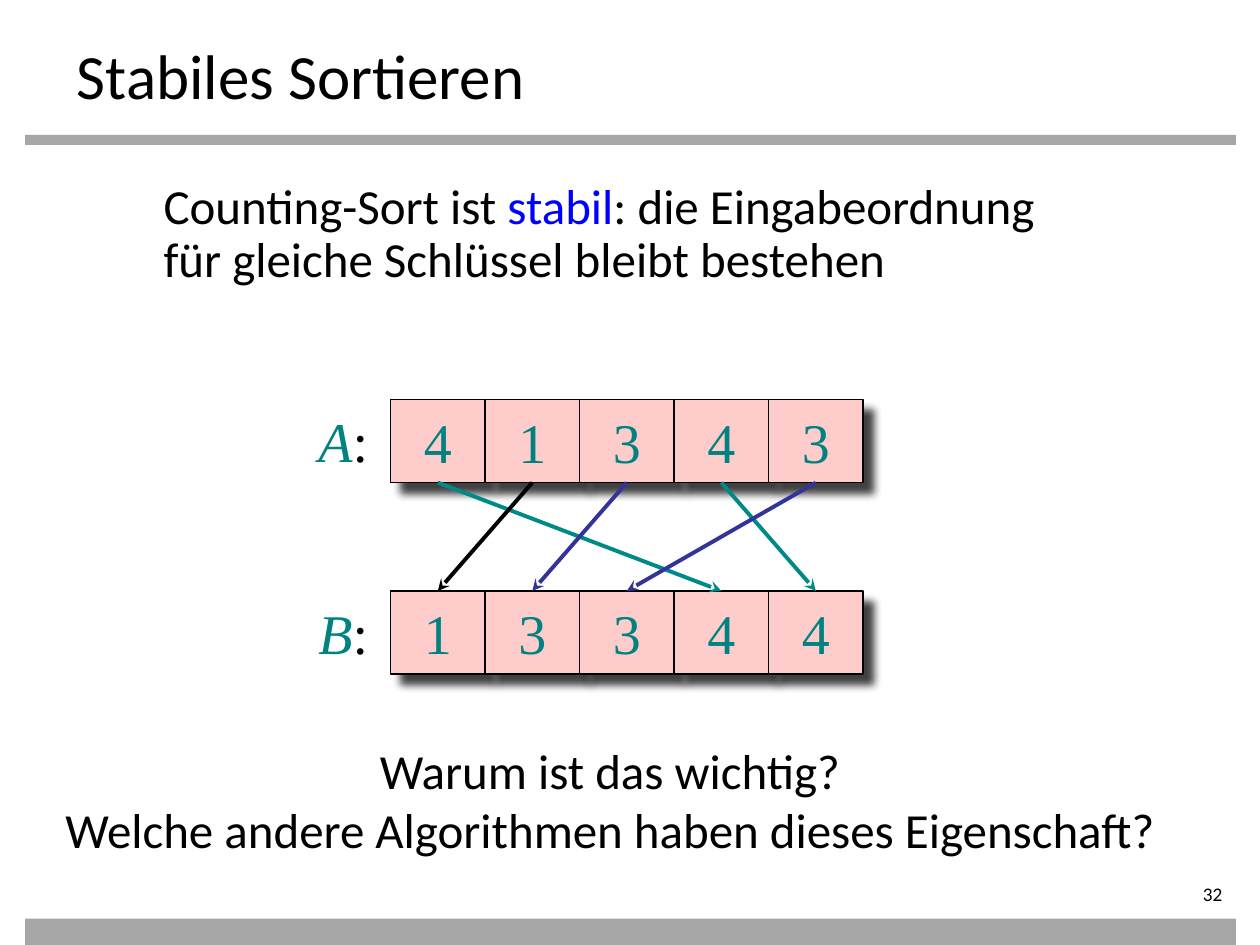
"""Build the slide on stable sorting with Counting-Sort."""
from lxml import etree
from pptx import Presentation
from pptx.dml.color import RGBColor
from pptx.enum.shapes import MSO_CONNECTOR, MSO_SHAPE
from pptx.enum.text import MSO_ANCHOR, MSO_AUTO_SIZE, PP_ALIGN
from pptx.oxml import parse_xml
from pptx.oxml.ns import qn
from pptx.util import Inches, Pt

RECT = MSO_SHAPE.RECTANGLE
STRAIGHT = MSO_CONNECTOR.STRAIGHT
TOP, MIDDLE = MSO_ANCHOR.TOP, MSO_ANCHOR.MIDDLE
NO_FIT, GROW = MSO_AUTO_SIZE.NONE, MSO_AUTO_SIZE.SHAPE_TO_FIT_TEXT
LEFT, CENTER, RIGHT = PP_ALIGN.LEFT, PP_ALIGN.CENTER, PP_ALIGN.RIGHT

BLACK = RGBColor(0x00, 0x00, 0x00)
GRAY = RGBColor(0xA6, 0xA6, 0xA6)
BLUE = RGBColor(0x00, 0x00, 0xFF)
PINK = RGBColor(0xFF, 0xCC, 0xCC)
TEAL = RGBColor(0x00, 0x83, 0x80)
ARROW_COLORS = {1: BLACK, 3: RGBColor(0x33, 0x33, 0x99), 4: RGBColor(0x00, 0x8A, 0x87)}

SANS, SERIF = "Calibri", "Times New Roman"
SHADOW = (
    '<a:outerShdw xmlns:a="http://schemas.openxmlformats.org/drawingml/2006/main" '
    'blurRad="63500" dist="107950" dir="2700000" algn="ctr" rotWithShape="0">'
    '<a:srgbClr val="000000"><a:alpha val="75000"/></a:srgbClr></a:outerShdw>'
)
CELL_W, CELL_H, CELL_X = 0.75, 0.66, 3.1
A_Y, B_Y = 3.17, 4.69


def add_runs(p, runs, size, name, align):
    """Fill a paragraph with (text, color, italic) runs."""
    p.alignment = align
    for text, color, italic in runs:
        r = p.add_run()
        r.text = text
        for key, value in {"size": Pt(size), "name": name, "italic": italic}.items():
            setattr(r.font, key, value)
        r.font.color.rgb = color


def add_text(box, runs, size, name, align, wrap=True):
    """Add a text box with one paragraph and return its text frame."""
    tf = s.shapes.add_textbox(*map(Inches, box)).text_frame
    tf.word_wrap = wrap
    tf.auto_size = GROW
    add_runs(tf.paragraphs[0], runs, size, name, align)
    return tf


prs = Presentation()
prs.slide_width, prs.slide_height = Inches(10), Inches(7.5)
s = prs.slides.add_slide(prs.slide_layouts[5])

for y, h in ((1.07, 0.08), (7.29, 0.21)):
    sp = s.shapes.add_shape(RECT, Inches(0.2), Inches(y), Inches(9.61), Inches(h))
    sp.shadow.inherit = False
    sp.fill.solid()
    sp.fill.fore_color.rgb = GRAY
    sp.line.fill.background()

title = s.shapes.title
title_box = {"left": 0.51, "top": 0.21, "width": 9, "height": 0.55}
for key, value in title_box.items():
    setattr(title, key, Inches(value))
tf = title.text_frame
title_format = {"vertical_anchor": TOP, "auto_size": NO_FIT, "margin_top": Inches(0.08)}
for key, value in title_format.items():
    setattr(tf, key, value)
add_runs(tf.paragraphs[0], [("Stabiles Sortieren", BLACK, False)], 36, SANS, LEFT)

statement = [
    ("Counting-Sort ist ", BLACK, False),
    ("stabil", BLUE, False),
    (": die Eingabeordnung für gleiche Schlüssel bleibt bestehen", BLACK, False),
]
tf = add_text((1.2, 1.4, 7.6, 0.96), statement, 28, SANS, LEFT)
tf.paragraphs[0].line_spacing = 0.9

a_values = [4, 1, 3, 4, 3]
order = sorted(range(len(a_values)), key=lambda i: a_values[i])
b_values = [a_values[i] for i in order]

for label, y, values in (("A", A_Y, a_values), ("B", B_Y, b_values)):
    label_runs = [(label, TEAL, True), (":", BLACK, False)]
    add_text((2.42, y + 0.01, 0.6, 0.63), label_runs, 32, SERIF, RIGHT, wrap=False)
    for i, value in enumerate(values):
        cell_box = (CELL_X + i * CELL_W, y, CELL_W, CELL_H)
        sp = s.shapes.add_shape(RECT, *map(Inches, cell_box))
        sp.shadow.inherit = False
        sp.element.spPr.find(qn("a:effectLst")).append(parse_xml(SHADOW))
        sp.fill.solid()
        sp.fill.fore_color.rgb = PINK
        sp.line.color.rgb = BLACK
        sp.line.width = Pt(0.75)
        tf = sp.text_frame
        tf.word_wrap = False
        tf.vertical_anchor = MIDDLE
        add_runs(tf.paragraphs[0], [(str(value), TEAL, False)], 32, SERIF, CENTER)

for i, value in enumerate(a_values):
    x1, x2 = (CELL_X + (k + 0.5) * CELL_W for k in (i, order.index(i)))
    arrow = s.shapes.add_connector(STRAIGHT, *map(Inches, (x1, A_Y + CELL_H, x2, B_Y)))
    arrow.line.color.rgb = ARROW_COLORS[value]
    arrow.line.width = Pt(2.25)
    spPr = arrow.element.spPr
    etree.SubElement(spPr.find(qn("a:ln")), qn("a:tailEnd"), type="stealth")
    etree.SubElement(spPr, qn("a:effectLst"))

question = [("Warum ist das wichtig?", BLACK, False)]
follow_up = [("Welche andere Algorithmen haben dieses Eigenschaft?", BLACK, False)]
tf = add_text((0.19, 5.83, 9.3, 1.04), question, 28, SANS, CENTER, wrap=False)
add_runs(tf.add_paragraph(), follow_up, 28, SANS, CENTER)

tf = add_text((8.7, 7, 1.1, 0.22), [("32", BLACK, False)], 11, SANS, RIGHT)
tf.auto_size = NO_FIT
for side in ("left", "top", "bottom"):
    setattr(tf, f"margin_{side}", Inches(0))

prs.save("out.pptx")
